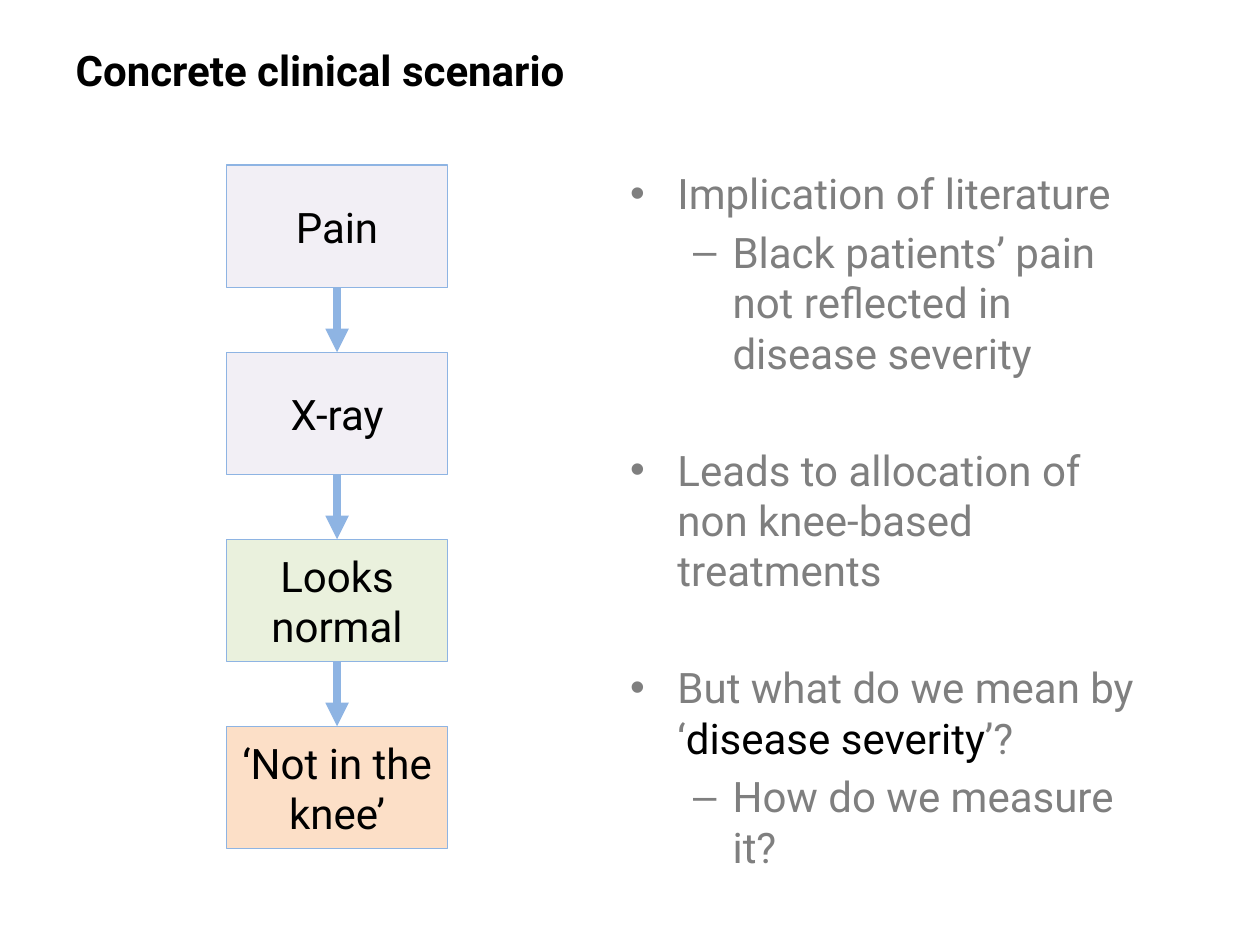
from pptx import Presentation
from pptx.dml.color import RGBColor as RGB
from pptx.enum.shapes import MSO_CONNECTOR as LINE, MSO_SHAPE as SHAPE
from pptx.enum.text import MSO_ANCHOR as ANCHOR, MSO_AUTO_SIZE as FIT, PP_ALIGN as ALIGN
from pptx.oxml.ns import qn
from pptx.util import Cm, Pt
from lxml.etree import SubElement as Sub

COLORS = {
    "black": "000000",
    "gray": "7F7F7F",
    "blue": "8EB4E3",
    "lilac": "E6E0EC",
    "green": "D7E4BD",
    "orange": "FAC090",
}


class Deck:
    font = "Roboto"
    size = Pt(24)

    def __init__(self):
        self.prs = Presentation()
        self.prs.slide_width, self.prs.slide_height = Cm(25.4), Cm(19.05)
        self.slide = self.prs.slides.add_slide(self.prs.slide_layouts[1])

    def color(self, name):
        return RGB.from_string(COLORS[name])

    def style(self, run, color="black", bold=False):
        run.font.name, run.font.size, run.font.bold = self.font, self.size, bold
        run.font.color.rgb = self.color(color)

    def place(self, shape, x, y, w, h):
        shape.left, shape.top, shape.width, shape.height = Cm(x), Cm(y), Cm(w), Cm(h)
        shape.text_frame.auto_size = FIT.NONE

    def title(self, text, *area):
        shape = self.slide.shapes.title
        self.place(shape, *area)
        shape.text_frame.text = text
        shape.text_frame.vertical_anchor = ANCHOR.MIDDLE
        para = shape.text_frame.paragraphs[0]
        para.alignment = ALIGN.LEFT
        self.style(para.runs[0], bold=True)

    def bullets(self, items, *area):
        """Each item is a level, the space before it and its (text, color) parts."""
        shape = self.slide.placeholders[1]
        self.place(shape, *area)
        frame = shape.text_frame
        for i, (level, gap, parts) in enumerate(items):
            para = frame.add_paragraph() if i else frame.paragraphs[0]
            para.level = level
            if gap:
                para.space_before = Pt(gap)
            for text, color in parts:
                run = para.add_run()
                run.text = text
                self.style(run, color)

    def box(self, text, fill, *area):
        shape = self.slide.shapes.add_shape(SHAPE.RECTANGLE, *map(Cm, area))
        shape.shadow.inherit = False
        shape.fill.solid()
        shape.fill.fore_color.rgb = self.color(fill)
        tint = shape.fill._xPr.find(".//" + qn("a:srgbClr"))
        Sub(tint, qn("a:alpha"), val="50000")
        shape.line.color.rgb = self.color("blue")
        shape.line.width = Pt(0.75)
        frame = shape.text_frame
        frame.text = text
        frame.word_wrap = True
        frame.vertical_anchor = ANCHOR.MIDDLE
        para = frame.paragraphs[0]
        para.alignment = ALIGN.CENTER
        self.style(para.runs[0])
        return shape

    def arrow(self, start, end):
        link = self.slide.shapes.add_connector(LINE.STRAIGHT, 0, 0, 0, 0)
        link.begin_connect(start, 2)
        link.end_connect(end, 0)
        link.line.color.rgb = self.color("blue")
        link.line.width = Pt(4.5)
        Sub(link.line._get_or_add_ln(), qn("a:tailEnd"), type="triangle")
        Sub(link._element.spPr, qn("a:effectLst"))


def main():
    deck = Deck()
    deck.title("Concrete clinical scenario", 1.27, 0.76, 22.86, 1.27)

    # Implications, with wide gaps between the groups
    gap = 38
    deck.bullets([
        (0, None, [("Implication of literature", "gray")]),
        (1, None, [("Black patients’ pain not reflected in disease severity", "gray")]),
        (0, gap, [("Leads to allocation of non knee-based treatments", "gray")]),
        (0, gap, [("But what do we mean by ‘", "gray"),
                  ("disease severity", "black"), ("’?", "gray")]),
        (1, None, [("How do we measure it?", "gray")]),
    ], 12.45, 3.25, 10.92, 12.57)

    # Flow of steps, top to bottom
    steps = [
        ("Pain", "lilac"),
        ("X-ray", "lilac"),
        ("Looks normal", "green"),
        ("‘Not in the knee’", "orange"),
    ]
    left, top, pitch, wide, high = 4.57, 3.33, 3.77, 4.45, 2.47
    boxes = [deck.box(text, fill, left, top + i * pitch, wide, high)
             for i, (text, fill) in enumerate(steps)]
    for start, end in zip(boxes, boxes[1:]):
        deck.arrow(start, end)

    deck.prs.save("out.pptx")


if __name__ == "__main__":
    main()
